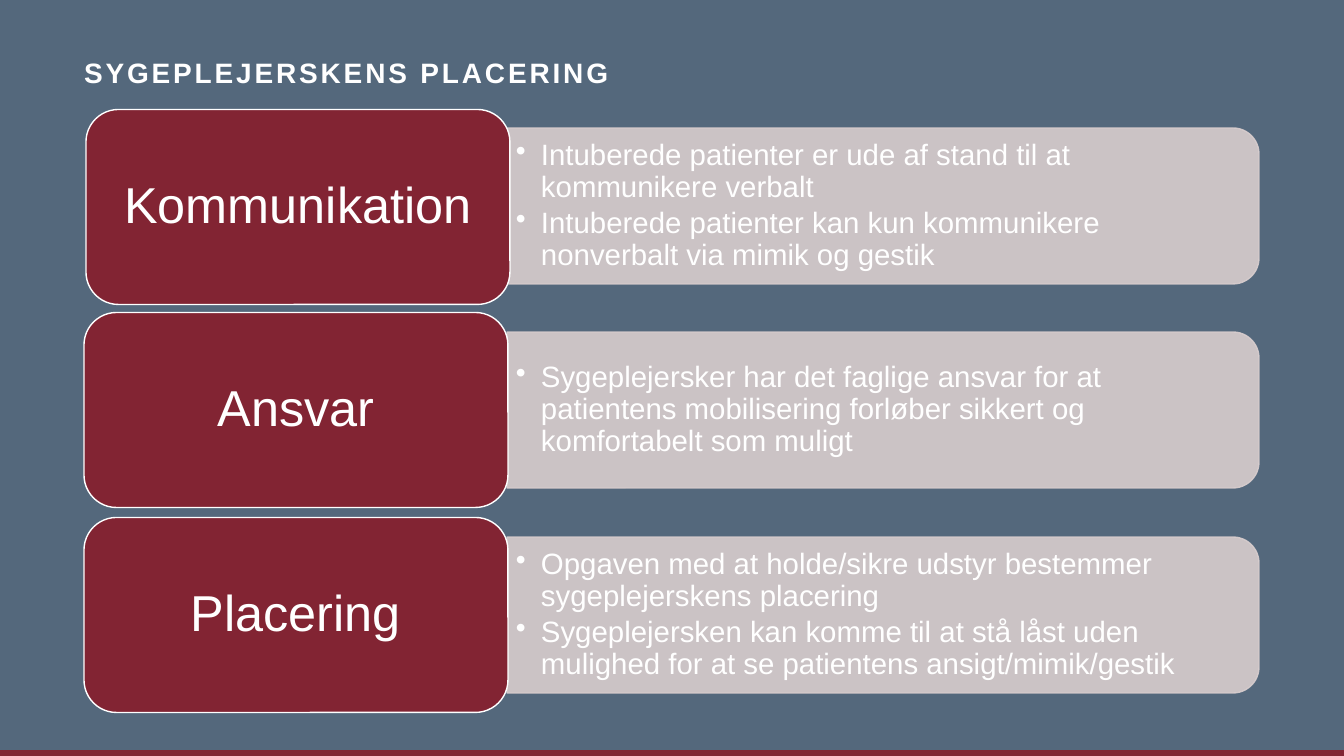
from lxml.etree import SubElement
from pptx import Presentation
from pptx.dml.color import RGBColor
from pptx.enum.shapes import MSO_SHAPE
from pptx.enum.text import MSO_ANCHOR, PP_ALIGN
from pptx.oxml.ns import qn
from pptx.util import Emu, Pt

HEADING = "SYGEPLEJERSKENS PLACERING"
TOPICS = [
    ("Kommunikation", [
        "Intuberede patienter er ude af stand til at kommunikere verbalt",
        "Intuberede patienter kan kun kommunikere nonverbalt via mimik og gestik",
    ]),
    ("Ansvar", [
        "Sygeplejersker har det faglige ansvar for at patientens mobilisering "
        "forløber sikkert og komfortabelt som muligt",
    ]),
    ("Placering", [
        "Opgaven med at holde/sikre udstyr bestemmer sygeplejerskens placering",
        "Sygeplejersken kan komme til at stå låst uden mulighed for at se "
        "patientens ansigt/mimik/gestik",
    ]),
]
COLORS = {"slate": "54687C", "wine": "822433", "rose": "D8CDCE", "white": "FFFFFF"}
FONT = "Arial"

SLIDE_W, SLIDE_H = 1344, 756
LEFT = 84
CARD_W, CARD_H = 424, 195
PANEL_X, PANEL_W, PANEL_H = 507, 752, 156
POINTS_W, POINTS_H = 744, 140
FIRST_CENTRE, TWO_ROWS = 206, 409
FIRST_CARD_SHIFT = (2, 1)


def px(n):
    return Emu(round(n * 12192000 / SLIDE_W))


def box(x, y, w, h):
    return [px(n) for n in (x, y, w, h)]


def color(name):
    return RGBColor.from_string(COLORS[name])


def add_block(kind, bounds, fill, line=None):
    block = slide.shapes.add_shape(kind, *box(*bounds))
    block.shadow.inherit = False
    block.fill.solid()
    block.fill.fore_color.rgb = color(fill)
    if line:
        block.line.color.rgb = color(line)
        block.line.width = Pt(1)
    else:
        block.line.fill.background()
    return block


def write(frame, lines, size, inset_x, inset_y, anchor=MSO_ANCHOR.MIDDLE,
          align=PP_ALIGN.LEFT, bold=False, bullets=False):
    frame.word_wrap = True
    frame.vertical_anchor = anchor
    frame.margin_left = frame.margin_right = px(inset_x)
    frame.margin_top = frame.margin_bottom = px(inset_y)
    for i, line in enumerate(lines):
        paragraph = frame.paragraphs[0] if i == 0 else frame.add_paragraph()
        paragraph.add_run().text = line
        if bullets:
            props = paragraph._p.get_or_add_pPr()
            props.set("marL", str(px(25)))
            props.set("indent", str(-px(25)))
            SubElement(props, qn("a:buChar")).set("char", "•")
            paragraph.space_after = Pt(3)
        paragraph.alignment = align
        paragraph.line_spacing = 0.9
        font = paragraph.font
        font.name, font.size, font.bold = FONT, Pt(size), bold
        font.color.rgb = color("white")


def add_panel(centre):
    middle_x = PANEL_X + PANEL_W / 2
    bounds = (middle_x - PANEL_H / 2, centre - PANEL_W / 2, PANEL_H, PANEL_W)
    panel = add_block(MSO_SHAPE.ROUND_2_SAME_RECTANGLE, bounds, "rose", "rose")
    panel.rotation = 90
    for tint in panel._element.spPr.iter(qn("a:srgbClr")):
        SubElement(tint, qn("a:alpha")).set("val", "90000")


presentation = Presentation()
presentation.slide_width, presentation.slide_height = px(SLIDE_W), px(SLIDE_H)
slide = presentation.slides.add_slide(presentation.slide_layouts[6])
slide.background.fill.solid()
slide.background.fill.fore_color.rgb = color("slate")
add_block(MSO_SHAPE.RECTANGLE, (0, 750, SLIDE_W, 6), "wine")

heading = slide.shapes.add_textbox(*box(LEFT, 40, 1174, 50))
write(heading.text_frame, [HEADING], 20, 0, 0, MSO_ANCHOR.BOTTOM, bold=True)
heading.text_frame.paragraphs[0].runs[0]._r.get_or_add_rPr().set("spc", "200")

for row, (topic, points) in enumerate(TOPICS):
    centre = FIRST_CENTRE + TWO_ROWS * row // 2
    add_panel(centre)
    points_box = slide.shapes.add_textbox(
        *box(PANEL_X, centre - POINTS_H / 2, POINTS_W, POINTS_H))
    write(points_box.text_frame, points, 21, 9, 4, bullets=True)

    shift_x, shift_y = FIRST_CARD_SHIFT if row == 0 else (0, 0)
    card = add_block(
        MSO_SHAPE.ROUNDED_RECTANGLE,
        (LEFT + shift_x, centre - CARD_H / 2 + shift_y, CARD_W, CARD_H),
        "wine", "white")
    write(card.text_frame, [topic], 36, 15, 7, align=PP_ALIGN.CENTER)

presentation.save("out.pptx")
